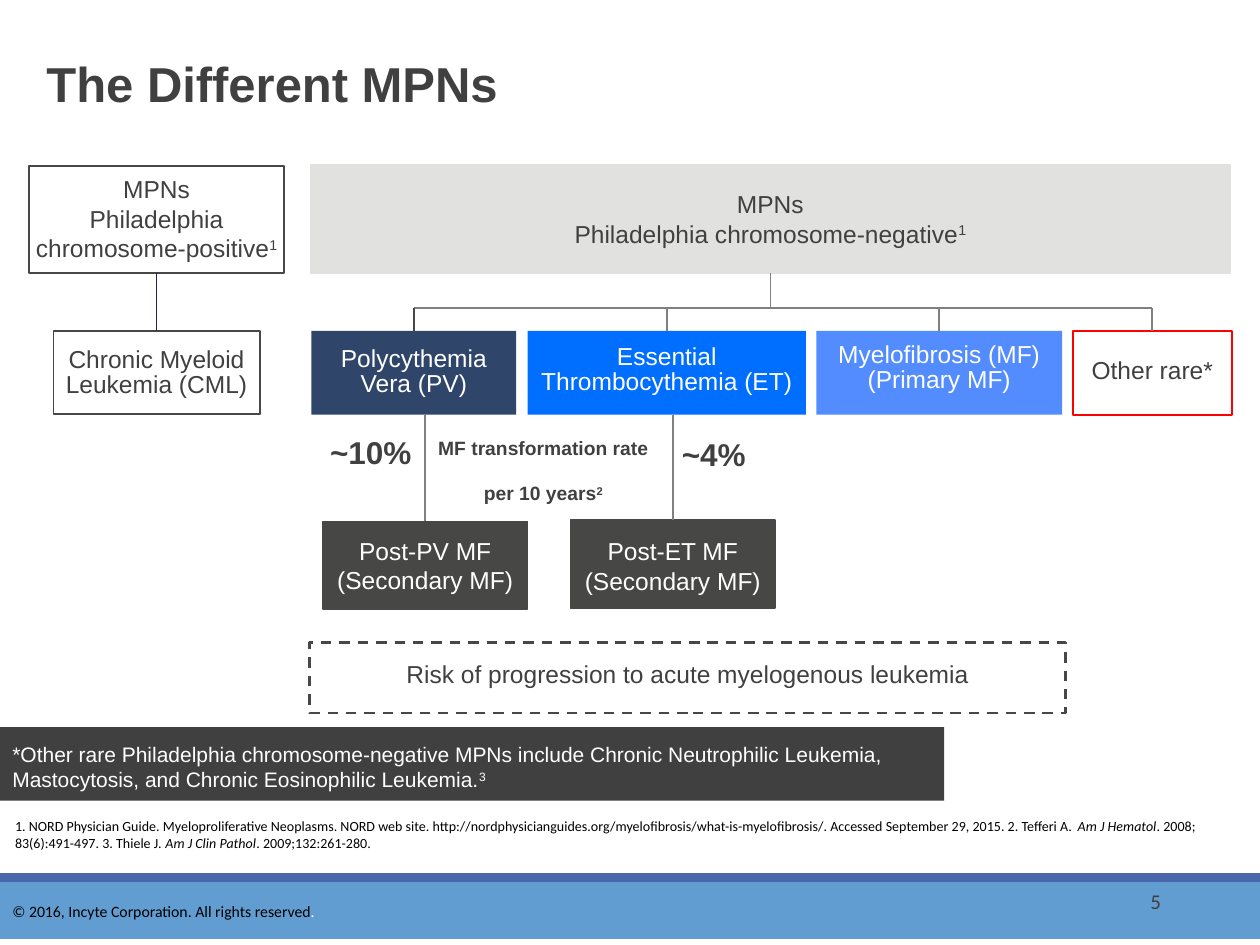
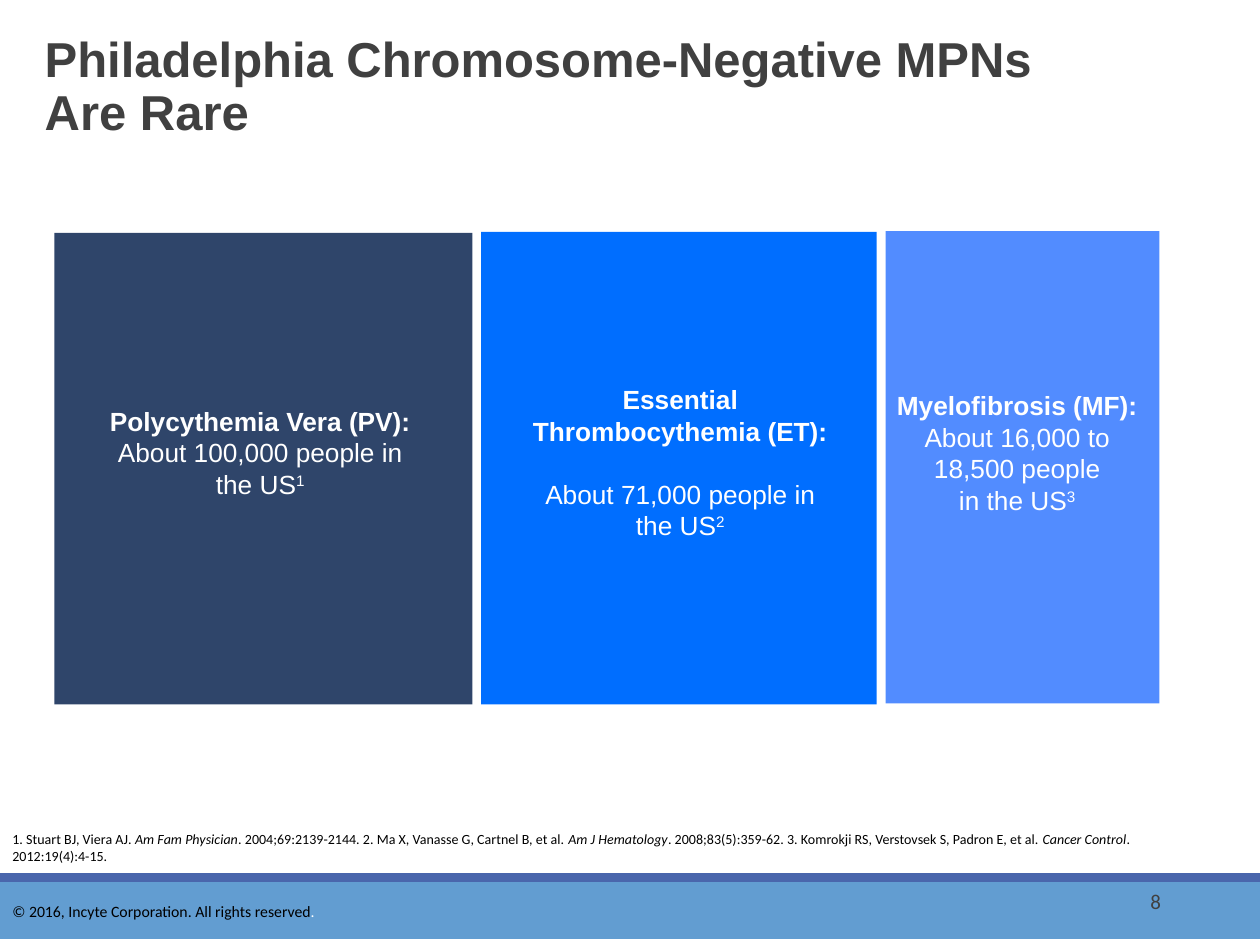
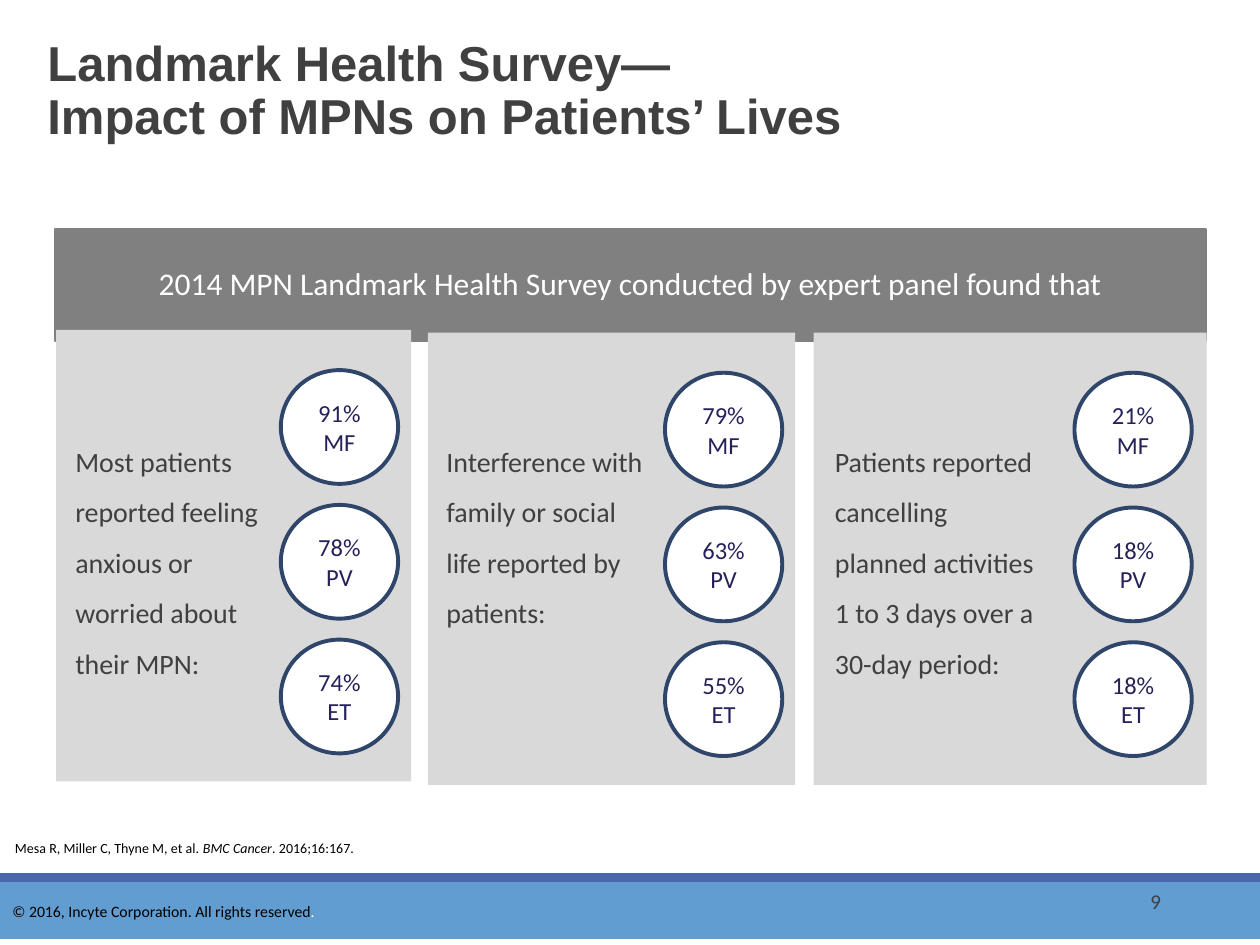
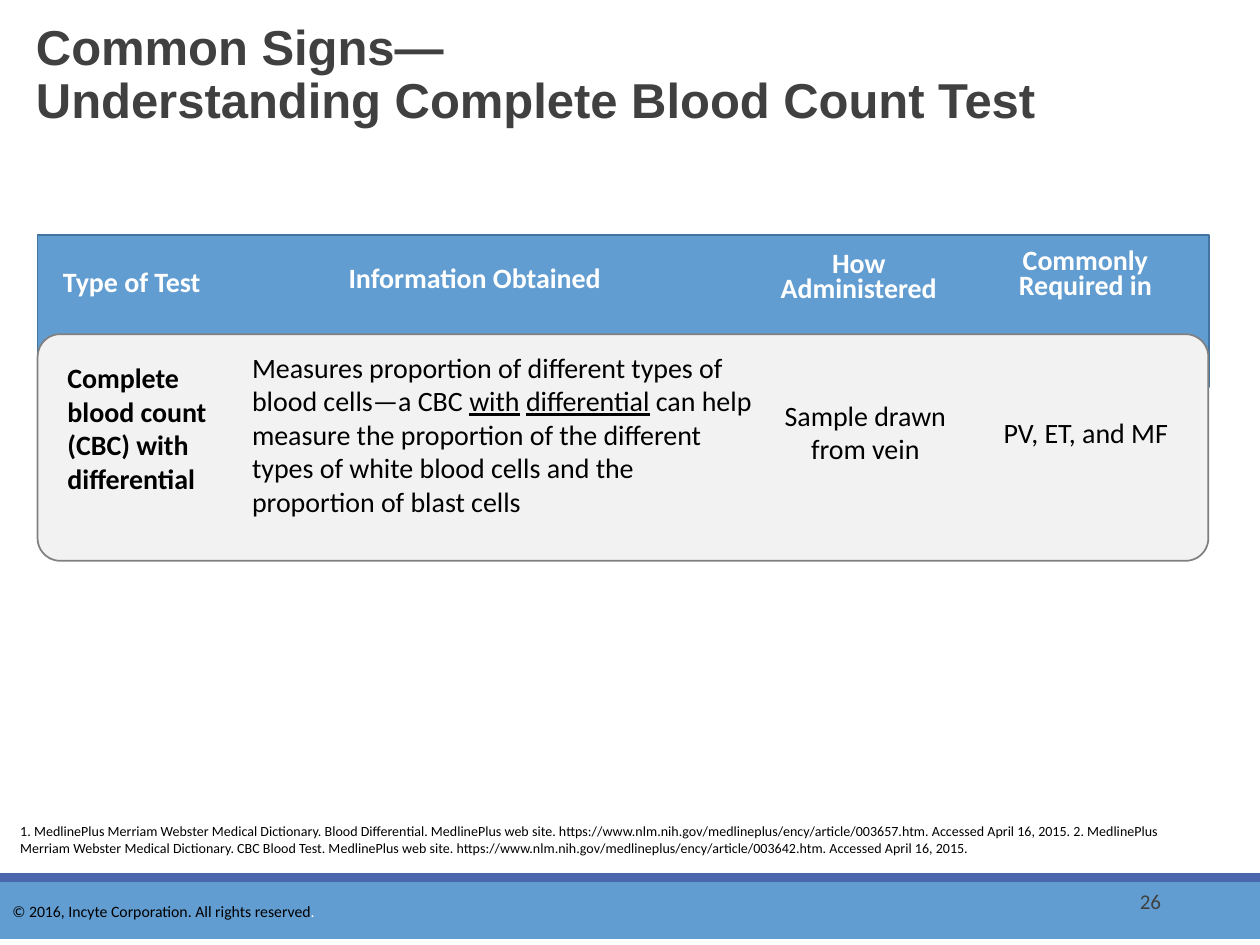
from dataclasses import dataclass
from typing import NamedTuple

from lxml import etree
from pptx import Presentation
from pptx.dml.color import RGBColor
from pptx.enum.dml import MSO_LINE
from pptx.enum.shapes import MSO_CONNECTOR, MSO_SHAPE
from pptx.enum.text import MSO_ANCHOR, PP_ALIGN
from pptx.oxml.ns import qn
from pptx.util import Pt

LEFT, CENTER, RIGHT = PP_ALIGN.LEFT, PP_ALIGN.CENTER, PP_ALIGN.RIGHT
TOP, MIDDLE = MSO_ANCHOR.TOP, MSO_ANCHOR.MIDDLE
RECT, OVAL = MSO_SHAPE.RECTANGLE, MSO_SHAPE.OVAL
ROUNDED, PENTAGON = MSO_SHAPE.ROUNDED_RECTANGLE, MSO_SHAPE.PENTAGON
STRAIGHT = MSO_CONNECTOR.STRAIGHT
DASH = MSO_LINE.DASH
TOP_SIDE, BOTTOM_SIDE = 0, 2


@dataclass(frozen=True)
class Theme:
    heading_font: str = "Arial"
    body_font: str = "Calibri"
    text: str = "404040"
    black: str = "000000"
    white: str = "FFFFFF"
    band: str = "629DD1"
    band_edge: str = "4A66AC"
    header_edge: str = "43739E"
    navy: str = "2F456A"
    blue: str = "006EFF"
    light_blue: str = "528CFF"
    indigo: str = "25215A"
    charcoal: str = "474746"
    gray: str = "808080"
    card: str = "D9D9D9"
    pale: str = "E1E1DF"
    row: str = "F2F2F2"
    red: str = "FF0000"
    title_size: float = 28
    banner_size: float = 18
    body_size: float = 16
    block_size: float = 15
    node_size: float = 14
    small_size: float = 12
    caption_size: float = 11
    copyright_size: float = 9
    reference_size: float = 8


T = Theme()


class Box(NamedTuple):
    x: float
    y: float
    w: float
    h: float

    @property
    def mid(self) -> float:
        return self.x + self.w / 2


@dataclass(frozen=True)
class Run:
    text: str
    italic: bool = False
    underline: bool = False
    sup: bool = False
    color: str = ""


@dataclass(frozen=True)
class Para:
    runs: tuple
    bold: bool = False
    before: float = 0


@dataclass(frozen=True)
class Style:
    size: float
    color: str = T.text
    font: str = T.body_font
    align: PP_ALIGN = LEFT
    spacing: object = None
    anchor: MSO_ANCHOR = TOP


@dataclass(frozen=True)
class Node:
    """A diagram box with a label that starts `drop` points below its top."""
    box: Box
    paras: tuple
    drop: float
    fill: str = T.white
    line: str = ""
    color: str = T.text
    spacing: float = 1
    width: float = 1
    dash: bool = False


@dataclass(frozen=True)
class Block:
    box: Box
    fill: str
    text_box: Box
    paras: tuple


@dataclass(frozen=True)
class Card:
    box: Box
    finding: str
    text_x: float
    circle_x: float
    rates: tuple


def para(*runs, bold: bool = False, before: float = 0) -> Para:
    return Para(runs, bold, before)


def sup(text: str) -> Run:
    return Run(text, sup=True)


def ital(text: str) -> Run:
    return Run(text, italic=True)


def under(text: str) -> Run:
    return Run(text, underline=True)


def rgb(color: str) -> RGBColor:
    return RGBColor.from_string(color)


def pts(*values: float) -> list:
    return [Pt(v) for v in values]


def add_run(p, run) -> None:
    if isinstance(run, str):
        run = Run(run)
    for n, line in enumerate(run.text.split("\n")):
        if n:
            p.add_line_break()
        r = p.add_run()
        r.text = line
        if run.italic:
            r.font.italic = True
        if run.underline:
            r.font.underline = True
        if run.color:
            r.font.color.rgb = rgb(run.color)
        if run.sup:
            r._r.get_or_add_rPr().set("baseline", "30000")


def write(tf, paras, style: Style) -> None:
    tf.word_wrap = True
    tf.vertical_anchor = style.anchor
    for n, item in enumerate(paras):
        p = tf.add_paragraph() if n else tf.paragraphs[0]
        p.alignment = style.align
        if style.spacing:
            p.line_spacing = style.spacing
        if item.before:
            p.space_before = Pt(item.before)
        p.font.size = Pt(style.size)
        p.font.name = style.font
        p.font.bold = item.bold
        p.font.color.rgb = rgb(style.color)
        for run in item.runs:
            add_run(p, run)


def add_label(slide, box: Box, paras, style: Style) -> None:
    write(slide.shapes.add_textbox(*pts(*box)).text_frame, paras, style)


def add_box(slide, box: Box, fill: str, line: str = "", width: float = 1,
            kind: MSO_SHAPE = RECT, adjust: float | None = None):
    sp = slide.shapes.add_shape(kind, *pts(*box))
    sp.shadow.inherit = False
    if adjust is not None:
        sp.adjustments[0] = adjust
    sp.fill.solid()
    sp.fill.fore_color.rgb = rgb(fill)
    if line:
        sp.line.color.rgb = rgb(line)
        sp.line.width = Pt(width)
    else:
        sp.line.fill.background()
    return sp


def add_line(slide, x1: float, y1: float, x2: float, y2: float,
             color: str = T.gray, start=None, end=None) -> None:
    """Draw a line, joined to the bottom of `start` and the top of `end`."""
    c = slide.shapes.add_connector(STRAIGHT, *pts(x1, y1, x2, y2))
    c.line.color.rgb = rgb(color)
    c.line.width = Pt(1)
    etree.SubElement(c._element.spPr, qn("a:effectLst"))
    if start is not None:
        c.begin_connect(start, BOTTOM_SIDE)
    if end is not None:
        c.end_connect(end, TOP_SIDE)


def add_node(slide, node: Node):
    sp = add_box(slide, node.box, node.fill, node.line, node.width)
    if node.dash:
        sp.line.dash_style = DASH
    x, y, w, h = node.box
    overhang = 6
    label_box = Box(x - overhang, y + node.drop, w + 2 * overhang, h - node.drop)
    add_label(slide, label_box, node.paras,
              Style(T.node_size, node.color, T.heading_font, CENTER, node.spacing))
    return sp


def new_slide(prs, title: str, title_box: Box, number: int,
              reference: Para, reference_box: Box):
    """Add a slide with the shared footer, title, number and reference."""
    slide = prs.slides.add_slide(prs.slide_layouts[6])
    band = add_box(slide, Box(0, 500.5, 720, 36), T.band)
    tf = band.text_frame
    write(tf, [para("© 2016, Incyte Corporation. All rights reserved",
                    Run(".", color=T.white))],
          Style(T.copyright_size, T.black, anchor=MIDDLE))
    tf.margin_top = Pt(8)
    add_box(slide, Box(0, 499, 720, 5), T.band_edge)
    add_label(slide, title_box, [para(title, bold=True)],
              Style(T.title_size, font=T.heading_font, spacing=0.9, anchor=MIDDLE))
    add_label(slide, Box(508.5, 500.5, 162, 29), [para(str(number))],
              Style(T.small_size, align=RIGHT, anchor=MIDDLE))
    add_label(slide, reference_box, [reference], Style(T.reference_size, T.black))
    return slide


def build_mpn_types(prs) -> None:
    reference = para(
        "1. NORD Physician Guide. Myeloproliferative Neoplasms. NORD web site. "
        "http://nordphysicianguides.org/myelofibrosis/what-is-myelofibrosis/. "
        "Accessed September 29, 2015. 2. Tefferi A. ", ital("Am J Hematol"),
        ". 2008; 83(6):491-497. 3. Thiele J. ", ital("Am J Clin Pathol"),
        ". 2009;132:261-280.")
    slide = new_slide(prs, "The Different MPNs", Box(19.5, 13, 700, 73), 5,
                      reference, Box(1.5, 463.5, 693.5, 26.5))

    positive = Node(Box(16.5, 95, 146, 61),
                    (para("MPNs"), para("Philadelphia\nchromosome-positive", sup("1"))),
                    1, line=T.charcoal)
    negative = Node(Box(177.5, 94.5, 525.5, 61.5),
                    (para("MPNs"), para("Philadelphia chromosome-negative", sup("1"))),
                    10, T.pale, T.pale)
    cml = Node(Box(30.5, 189, 118, 47.5),
               (para("Chronic Myeloid"), para("Leukemia (CML)")),
               6.5, line=T.charcoal, spacing=0.85)
    branches = (
        Node(Box(178, 189, 117, 48), (para("Polycythemia\nVera (PV)"),),
             6, T.navy, color=T.white, spacing=0.85),
        Node(Box(301.5, 189, 159, 48), (para("Essential Thrombocythemia (ET)"),),
             5, T.blue, color=T.white, spacing=0.85),
        Node(Box(466.5, 189, 140.5, 48),
             (para("Myelofibrosis (MF)"), para("(Primary MF)")),
             4, T.light_blue, color=T.white, spacing=0.85),
        Node(Box(613, 189, 91, 48), (para("Other rare*"),),
             13, line=T.red, spacing=0.85),
    )
    secondary = (
        Node(Box(184.5, 298, 117, 50), (para("Post-PV MF"), para("(Secondary MF)")),
             4.5, T.charcoal, T.charcoal, T.white),
        Node(Box(326, 297, 117, 50.5), (para("Post-ET MF"), para("(Secondary MF)")),
             6, T.charcoal, T.charcoal, T.white),
    )
    risk = Node(Box(177, 367, 432, 40.5),
                (para("Risk of progression to acute myelogenous leukemia"),),
                6, line=T.charcoal, width=1.5, dash=True)

    positive_sp = add_node(slide, positive)
    cml_sp = add_node(slide, cml)
    add_line(slide, positive.box.mid, 156, cml.box.mid, 189, T.indigo,
             positive_sp, cml_sp)

    bus_y = 176
    negative_sp = add_node(slide, negative)
    add_line(slide, negative.box.mid, 156, negative.box.mid, bus_y, start=negative_sp)
    add_line(slide, branches[0].box.mid, bus_y, branches[-1].box.mid, bus_y)
    for node in branches:
        sp = add_node(slide, node)
        color = T.charcoal if node is branches[0] else T.gray
        add_line(slide, node.box.mid, bus_y, node.box.mid, node.box.y, color, end=sp)
    for node in secondary:
        sp = add_node(slide, node)
        add_line(slide, node.box.mid, 237, node.box.mid, node.box.y, end=sp)
    add_node(slide, risk)

    rate = Style(T.banner_size, font=T.heading_font)
    add_label(slide, Box(181.5, 244, 62.5, 29), [para("~10%", bold=True)], rate)
    add_label(slide, Box(382.5, 245, 54, 29), [para("~4%", bold=True)], rate)
    add_label(slide, Box(241, 245.5, 139, 46),
              [para("MF transformation rate", bold=True),
               para("per 10 years", sup("2"), bold=True, before=13)],
              Style(T.caption_size, font=T.heading_font, align=CENTER))

    add_box(slide, Box(0, 415.5, 539.5, 42), T.text, kind=PENTAGON, adjust=0)
    add_label(slide, Box(0, 420, 684, 36),
              [para("*Other rare Philadelphia chromosome-negative MPNs include "
                    "Chronic Neutrophilic Leukemia,\nMastocytosis, and Chronic "
                    "Eosinophilic Leukemia.", sup("3"))],
              Style(T.small_size, T.white, T.heading_font))


def build_prevalence(prs) -> None:
    reference = para(
        "1. Stuart BJ, Viera AJ. ", ital("Am Fam Physician"),
        ". 2004;69:2139-2144. 2. Ma X, Vanasse G, Cartnel B, et al. ",
        ital("Am J Hematology"),
        ". 2008;83(5):359-62. 3. Komrokji RS, Verstovsek S, Padron E, et al. ",
        ital("Cancer Control"), ". 2012:19(4):4-15.")
    slide = new_slide(prs, "Philadelphia Chromosome-Negative MPNs\nAre Rare",
                      Box(18.5, 16, 648, 69), 8, reference, Box(0, 471, 670.5, 28))
    blocks = (
        Block(Box(31, 133, 239, 269.5), T.navy, Box(41, 228, 215.5, 80),
              (para("Polycythemia Vera (PV):", bold=True),
               para("About 100,000 people in\nthe US", sup("1")))),
        Block(Box(275, 132.5, 226, 270), T.blue, Box(293, 215.5, 191.5, 98),
              (para("Essential Thrombocythemia (ET):", bold=True),
               para("About 71,000 people in the US", sup("2"), before=18))),
        Block(Box(506, 132, 156.5, 270), T.light_blue, Box(493, 219, 176.5, 98),
              (para("Myelofibrosis (MF):", bold=True),
               para("About 16,000 to"),
               para("18,500 people\nin the US", sup("3")))),
    )
    style = Style(T.block_size, T.white, T.heading_font, CENTER)
    for block in blocks:
        add_box(slide, block.box, block.fill)
        add_label(slide, block.text_box, block.paras, style)


def build_survey(prs) -> None:
    reference = para("Mesa R, Miller C, Thyne M, et al. ", ital("BMC Cancer"),
                     ". 2016;16:167.")
    slide = new_slide(prs, "Landmark Health Survey—\nImpact of MPNs on Patients’ Lives",
                      Box(20, 16, 577.5, 73), 9, reference, Box(1.5, 476, 669.5, 17.5))
    add_box(slide, Box(31.5, 131, 657.5, 64), T.gray, T.gray, kind=ROUNDED, adjust=0)
    add_label(slide, Box(31.5, 147.5, 657.5, 29),
              [para("2014 MPN Landmark Health Survey conducted by expert panel "
                    "found that")],
              Style(T.banner_size, T.white, align=CENTER))
    cards = (
        Card(Box(32, 188.5, 203, 258),
             "Most patients reported feeling anxious or worried about their MPN:",
             36, 160.5, ("91%", "78%", "74%")),
        Card(Box(244.5, 190, 210, 258.5),
             "Interference with family or social life reported by patients:",
             248, 380, ("79%", "63%", "55%")),
        Card(Box(465, 190, 224.5, 258.5),
             "Patients reported cancelling planned activities 1 to 3 days over a "
             "30-day period:",
             470, 614, ("21%", "18%", "18%")),
    )
    finding_style = Style(T.body_size, spacing=1.5)
    rate_style = Style(T.node_size, T.indigo, align=CENTER, anchor=MIDDLE)
    for card in cards:
        add_box(slide, card.box, T.card)
        add_label(slide, Box(card.text_x, 241, 132.5, 152), [para(card.finding)],
                  finding_style)
        for n, (rate, disease) in enumerate(zip(card.rates, ("MF", "PV", "ET"))):
            circle = Box(card.circle_x, card.box.y + 23 + 77 * n, 67, 65)
            sp = add_box(slide, circle, T.white, T.navy, 2.25, OVAL)
            write(sp.text_frame, [para(rate), para(disease)], rate_style)


def build_blood_count(prs) -> None:
    reference = para(
        "1. MedlinePlus Merriam Webster Medical Dictionary. Blood Differential. "
        "MedlinePlus web site. "
        "https://www.nlm.nih.gov/medlineplus/ency/article/003657.htm. "
        "Accessed April 16, 2015. 2. MedlinePlus Merriam Webster Medical Dictionary. "
        "CBC Blood Test. MedlinePlus web site. "
        "https://www.nlm.nih.gov/medlineplus/ency/article/003642.htm. "
        "Accessed April 16, 2015.")
    slide = new_slide(prs, "Common Signs—\nUnderstanding Complete Blood Count Test",
                      Box(13.5, 7, 639.5, 73), 26, reference, Box(4.5, 466.5, 690, 26.5))
    add_box(slide, Box(21.5, 134.5, 669.5, 86.5), T.band, T.header_edge)
    add_box(slide, Box(21.5, 191, 669, 129.5), T.row, T.gray, kind=ROUNDED, adjust=0.1)

    heading = Style(T.body_size, T.white, align=CENTER)
    tight = Style(T.body_size, T.white, align=CENTER, spacing=Pt(14))
    for box, text, style in (
        (Box(0, 147.5, 150.5, 26.5), "Type of Test", heading),
        (Box(172, 145.5, 198.5, 26.5), "Information Obtained", heading),
        (Box(415.5, 142, 150.5, 35.5), "How\nAdministered", tight),
        (Box(545, 140.5, 150.5, 36.5), "Commonly\nRequired in", tight),
    ):
        add_label(slide, box, [para(text, bold=True)], style)

    left = Style(T.body_size, T.black)
    centered = Style(T.body_size, T.black, align=CENTER)
    for box, content, style in (
        (Box(31.5, 202.5, 94.5, 85),
         para("Complete blood count (CBC) with differential", bold=True), left),
        (Box(137, 196.5, 302.5, 104.5),
         para("Measures proportion of different types of blood cells—a CBC ",
              under("with"), " ", under("differential"),
              " can help measure the proportion of the different types of white "
              "blood cells and the proportion of blast cells"), left),
        (Box(424, 224, 141, 46), para("Sample drawn\nfrom vein"), centered),
        (Box(550, 234, 141, 26.5), para("PV, ET, and MF"), centered),
    ):
        add_label(slide, box, [content], style)


def main() -> None:
    prs = Presentation()
    prs.slide_width, prs.slide_height = pts(720, 540)
    build_mpn_types(prs)
    build_prevalence(prs)
    build_survey(prs)
    build_blood_count(prs)
    prs.save("out.pptx")


if __name__ == "__main__":
    main()
